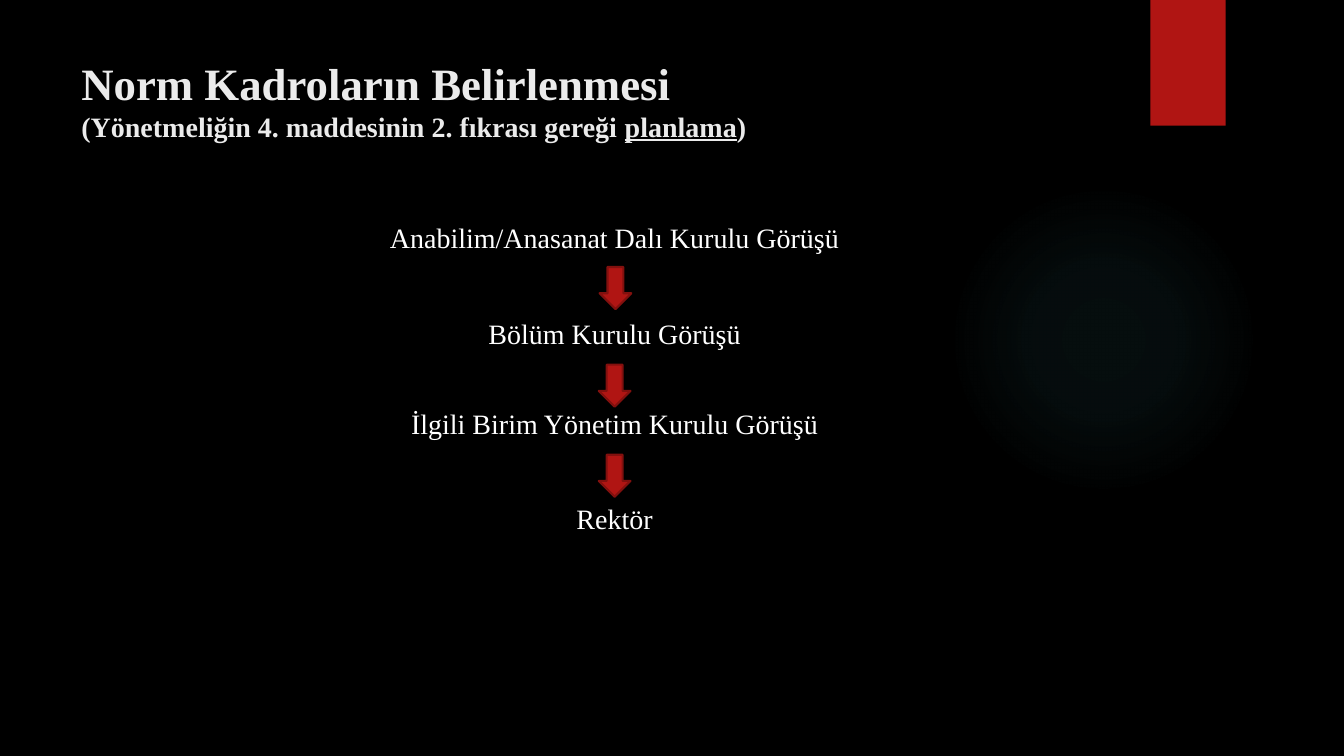
from lxml import etree
from pptx import Presentation
from pptx import util as u
from pptx.dml import color
from pptx.enum import shapes, text
from pptx.oxml import ns

COLORS = {
    "background": "000000",
    "glow": "50B9C1",
    "red": "B01513",
    "outline": "82100E",
    "title": "EBEBEB",
    "text": "FFFFFF",
}
FONT = "Times New Roman"
STEPS = [
    ("Anabilim/Anasanat Dalı Kurulu Görüşü", 5.44),
    ("Bölüm Kurulu Görüşü", 7.85),
    ("İlgili Birim Yönetim Kurulu Görüşü", 10.13),
    ("Rektör", 12.5),
]
ARROWS = [(15.11, 6.73), (15.09, 9.19), (15.09, 11.46)]
GLOW_STOPS = [(0, 7), (36, 6), (69, 0)]


def rgb(name):
    """Return the named colour."""
    return color.RGBColor.from_string(COLORS[name])


def add_block(s, kind, left, top, width, height, line=None):
    """Add a red preset shape, outlined if a line colour is named."""
    sp = s.shapes.add_shape(kind, u.Cm(left), u.Cm(top), u.Cm(width), u.Cm(height))
    sp.shadow.inherit = False
    sp.fill.solid()
    sp.fill.fore_color.rgb = rgb("red")
    if line:
        sp.line.color.rgb = rgb(line)
        sp.line.width = u.Pt(1.5)
    else:
        sp.line.fill.background()
    return sp


def add_glow(s):
    """Add the faint circle that fades out from its centre."""
    sp = add_block(s, shapes.MSO_SHAPE.OVAL, 23.9, 4.65, 7.82, 7.82)
    stops = "".join(
        f'<a:gs pos="{pos * 1000}"><a:srgbClr val="{COLORS["glow"]}">'
        f'<a:alpha val="{alpha * 1000}"/></a:srgbClr></a:gs>'
        for pos, alpha in GLOW_STOPS
    )
    grad = etree.fromstring(
        f'<a:gradFill {ns.nsdecls("a")} rotWithShape="1"><a:gsLst>{stops}</a:gsLst>'
        '<a:path path="circle"><a:fillToRect l="50000" t="50000" r="50000" b="50000"/>'
        "</a:path></a:gradFill>"
    )
    solid = sp.element.spPr.find(ns.qn("a:solidFill"))
    solid.getparent().replace(solid, grad)


def add_text(s, left, top, width, height, ink):
    """Add a wrapping text box and return its styled first paragraph."""
    sp = s.shapes.add_textbox(u.Cm(left), u.Cm(top), u.Cm(width), u.Cm(height))
    tf = sp.text_frame
    tf.word_wrap = True
    p = tf.paragraphs[0]
    p.font.name = FONT
    p.font.size = u.Pt(20)
    p.font.color.rgb = rgb(ink)
    return p


def add_title(s):
    """Add the heading with its smaller second line."""
    p = add_text(s, 1.8, 1.27, 26.14, 4.17, "title")
    p.font.bold = True
    r = p.add_run()
    r.text = "Norm Kadroların Belirlenmesi"
    r.font.size = u.Pt(32)
    p.add_line_break()
    p.add_run().text = "(Yönetmeliğin 4. maddesinin 2. fıkrası gereği "
    r = p.add_run()
    r.text = "planlama"
    r.font.underline = True
    p.add_run().text = ")"


def add_step(s, label, top):
    """Add one centred step of the approval chain."""
    p = add_text(s, 3.07, top, 24.84, 1.3, "text")
    p.alignment = text.PP_ALIGN.CENTER
    p.add_run().text = label


def main():
    """Build and save the slide."""
    prs = Presentation()
    prs.slide_width, prs.slide_height = u.Cm(33.87), u.Cm(19.05)
    s = prs.slides.add_slide(prs.slide_layouts[6])
    s.background.fill.solid()
    s.background.fill.fore_color.rgb = rgb("background")
    add_glow(s)
    add_block(s, shapes.MSO_SHAPE.RECTANGLE, 28.99, 0, 1.9, 3.17)
    add_title(s)
    for label, top in STEPS:
        add_step(s, label, top)
    for left, top in ARROWS:
        add_block(s, shapes.MSO_SHAPE.DOWN_ARROW, left, top, 0.8, 1.06, "outline")
    prs.save("out.pptx")


if __name__ == "__main__":
    main()
